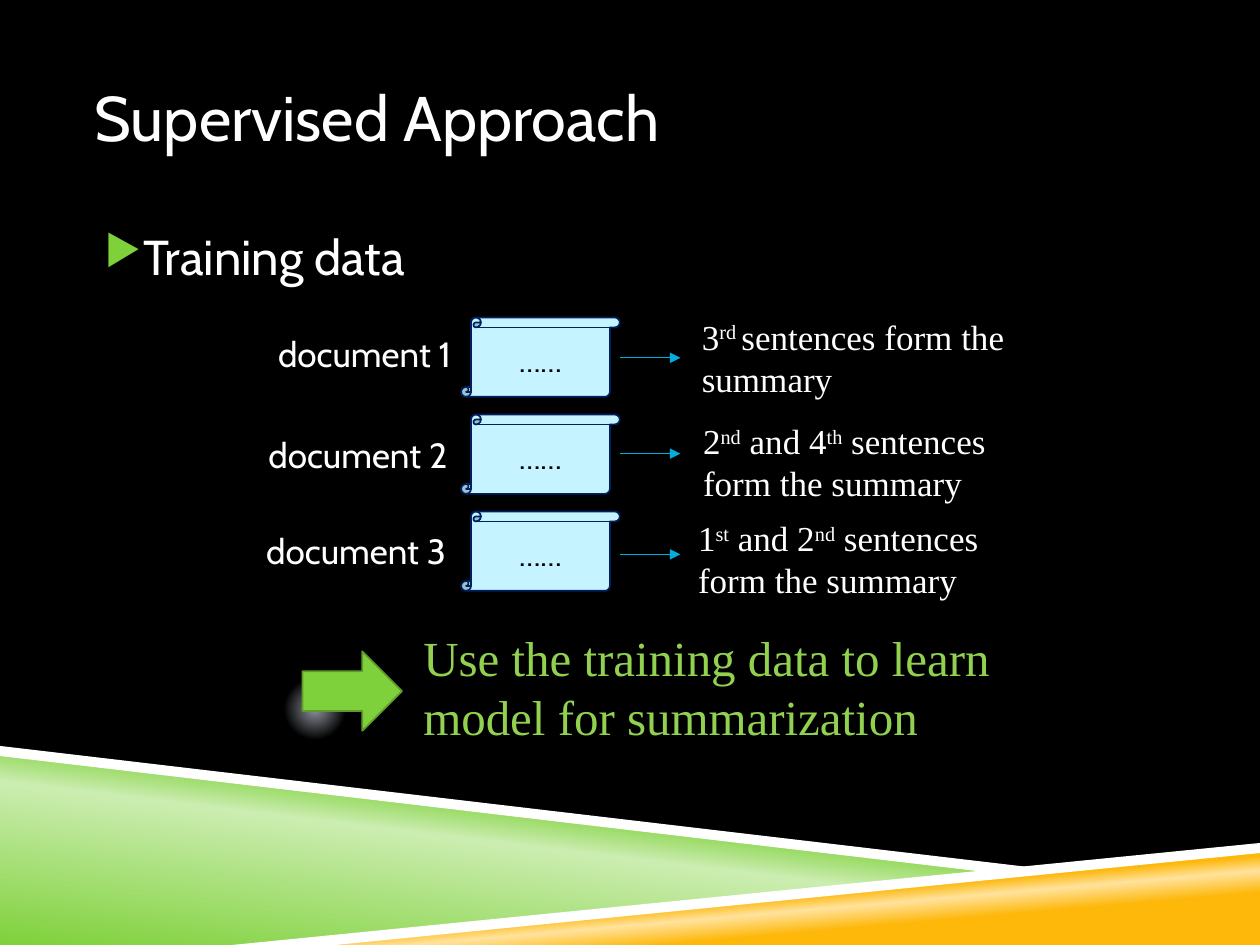
from dataclasses import dataclass

from lxml import etree
from pptx import Presentation
from pptx.dml.color import RGBColor
from pptx.enum.shapes import MSO_CONNECTOR, MSO_SHAPE
from pptx.enum.text import MSO_ANCHOR, MSO_AUTO_SIZE, PP_ALIGN
from pptx.oxml.ns import qn
from pptx.util import Inches, Pt


@dataclass(frozen=True)
class Theme:
    heading_font: str = "Cabin"
    note_font: str = "Times New Roman"
    white: str = "FFFFFF"
    black: str = "000000"
    green: str = "7FD13B"
    dark_green: str = "5E9B2C"
    pale_green: str = "CCEDB1"
    message: str = "92D050"
    orange: str = "FEB80A"
    pale_orange: str = "FFE39D"
    glow: str = "91969F"
    paper: str = "C5F3FF"
    paper_edge: str = "002060"
    arrow: str = "00ADDC"
    title_size: int = 36
    large_size: int = 28
    label_size: int = 20
    scroll_size: int = 18


theme = Theme()


def set_gradient(fill, owner, stops, angle=None):
    """Fill with (percent, colour) stops: linear at an angle, else radial."""
    fill.gradient()
    gradient = owner.find(".//" + qn("a:gradFill"))
    for child in list(gradient):
        gradient.remove(child)
    stop_list = etree.SubElement(gradient, qn("a:gsLst"))
    for percent, color in stops:
        stop = etree.SubElement(stop_list, qn("a:gs"), pos=str(percent * 1000))
        etree.SubElement(stop, qn("a:srgbClr"), val=color)
    if angle is None:
        radial = etree.SubElement(gradient, qn("a:path"), path="circle")
        etree.SubElement(radial, qn("a:fillToRect"),
                         l="50000", t="100000", r="100000", b="50000")
    else:
        etree.SubElement(gradient, qn("a:lin"), ang=str(angle * 60000), scaled="0")


def write_text(shape, pieces, size, color, font=theme.heading_font,
               align=PP_ALIGN.LEFT, anchor=MSO_ANCHOR.MIDDLE, insets=(0, 0)):
    """Write one paragraph; every second piece is superscript."""
    frame = shape.text_frame
    frame.word_wrap = True
    frame.auto_size = MSO_AUTO_SIZE.NONE
    frame.vertical_anchor = anchor
    frame.margin_left = frame.margin_right = Inches(insets[0])
    frame.margin_top = frame.margin_bottom = Inches(insets[1])
    paragraph = frame.paragraphs[0]
    paragraph.alignment = align
    for index, piece in enumerate(pieces):
        run = paragraph.add_run()
        run.text = piece
        run.font.name = font
        run.font.size = Pt(size)
        run.font.color.rgb = RGBColor.from_string(color)
        if index % 2:
            run.font._element.set("baseline", "30000")
    return paragraph


presentation = Presentation()
presentation.slide_width = Inches(10)
presentation.slide_height = Inches(7.5)
slide = presentation.slides.add_slide(presentation.slide_layouts[5])
shapes = slide.shapes
set_gradient(slide.background.fill, slide.element,
             [(0, theme.glow), (4, theme.black)])

# Coloured wedges and white edges along the bottom
green_stops = [(0, theme.green), (52, theme.pale_green), (66, theme.green)]
orange_stops = [(28, theme.orange), (40, theme.pale_orange), (48, theme.orange)]
bands = [
    ([(0, 5.97), (7.92, 6.92), (2, 7.5), (0, 7.5)], green_stops, 277),
    ([(1.98, 7.5), (10, 6.72), (10, 7.5)], orange_stops, 265),
    ([(0, 5.92), (0, 6), (7.9, 6.93), (8.32, 6.9)], None, None),
    ([(10, 6.69), (1.84, 7.5), (2.66, 7.5), (10, 6.77)], None, None),
]
for points, stops, angle in bands:
    corners = [(Inches(x), Inches(y)) for x, y in points]
    builder = shapes.build_freeform(*corners[0])
    builder.add_line_segments(corners[1:], close=True)
    band = builder.convert_to_shape()
    band.shadow.inherit = False
    band.line.fill.background()
    if stops:
        set_gradient(band.fill, band.element.spPr, stops, angle)
    else:
        band.fill.solid()
        band.fill.fore_color.rgb = RGBColor.from_string(theme.white)

# Title and bullet
title = shapes.title
title.left, title.top = Inches(0.75), Inches(0.3)
title.width, title.height = Inches(8.5), Inches(1.25)
write_text(title, ["Supervised Approach"], theme.title_size, theme.white,
           insets=(0, 0.05))

body = shapes.add_textbox(Inches(0.75), Inches(1.75), Inches(8.5), Inches(0.6))
bullet_paragraph = write_text(body, ["Training data"], theme.large_size, theme.white,
                              anchor=MSO_ANCHOR.TOP, insets=(0, 0.05))
properties = bullet_paragraph._p.get_or_add_pPr()
properties.set("marL", str(Inches(0.38)))
properties.set("indent", str(Inches(-0.3)))
bullet_color = etree.SubElement(properties, qn("a:buClr"))
etree.SubElement(bullet_color, qn("a:srgbClr"), val=theme.green)
etree.SubElement(properties, qn("a:buSzPct"), val="85000")
etree.SubElement(properties, qn("a:buChar"), char="▶")

# Documents: label position, arrow height, note box, note pieces
documents = [
    (1.1, 2.59, 2.84, (5.57, 2.56, 2.45), ["3", "rd ", "sentences form the summary"]),
    (1.07, 3.39, 3.6, (5.58, 3.39, 2.71),
     ["2", "nd", " and 4", "th", " sentences form the summary"]),
    (1.06, 4.15, 4.4, (5.54, 4.16, 2.68),
     ["1", "st", " and 2", "nd", " sentences form the summary"]),
]
for index, (label_left, label_top, arrow_y, note_box, pieces) in enumerate(documents):
    label = shapes.add_textbox(Inches(label_left), Inches(label_top),
                               Inches(2.58), Inches(0.44))
    write_text(label, [f"document {index + 1}"], theme.label_size, theme.white,
               align=PP_ALIGN.RIGHT, anchor=MSO_ANCHOR.TOP, insets=(0.1, 0.05))

    scroll = shapes.add_shape(MSO_SHAPE.VERTICAL_SCROLL, Inches(3.66),
                              Inches(2.52 + 0.77 * index), Inches(1.26), Inches(0.63))
    scroll.shadow.inherit = False
    scroll.fill.solid()
    scroll.fill.fore_color.rgb = RGBColor.from_string(theme.paper)
    scroll.line.color.rgb = RGBColor.from_string(theme.paper_edge)
    scroll.line.width = Pt(1)
    write_text(scroll, ["……"], theme.scroll_size, theme.black,
               align=PP_ALIGN.CENTER, insets=(0.1, 0.05))

    arrow = shapes.add_connector(MSO_CONNECTOR.STRAIGHT, Inches(4.92), Inches(arrow_y),
                                 Inches(5.4), Inches(arrow_y))
    arrow.line.color.rgb = RGBColor.from_string(theme.arrow)
    arrow.line.width = Pt(0.75)
    etree.SubElement(arrow.line._get_or_add_ln(), qn("a:tailEnd"), type="triangle")
    etree.SubElement(arrow._element.spPr, qn("a:effectLst"))

    left, top, width = note_box
    note = shapes.add_textbox(Inches(left), Inches(top), Inches(width), Inches(0.55))
    write_text(note, pieces, theme.label_size, theme.white, theme.note_font)

# Conclusion
block_arrow = shapes.add_shape(MSO_SHAPE.RIGHT_ARROW, Inches(2.4), Inches(5.17),
                               Inches(0.79), Inches(0.63))
block_arrow.shadow.inherit = False
block_arrow.fill.solid()
block_arrow.fill.fore_color.rgb = RGBColor.from_string(theme.green)
block_arrow.line.color.rgb = RGBColor.from_string(theme.dark_green)
block_arrow.line.width = Pt(1)

message = shapes.add_textbox(Inches(3.36), Inches(5.17), Inches(4.77), Inches(0.55))
write_text(message, ["Use the training data to learn model for summarization"],
           theme.large_size, theme.message, theme.note_font)

presentation.save("out.pptx")
